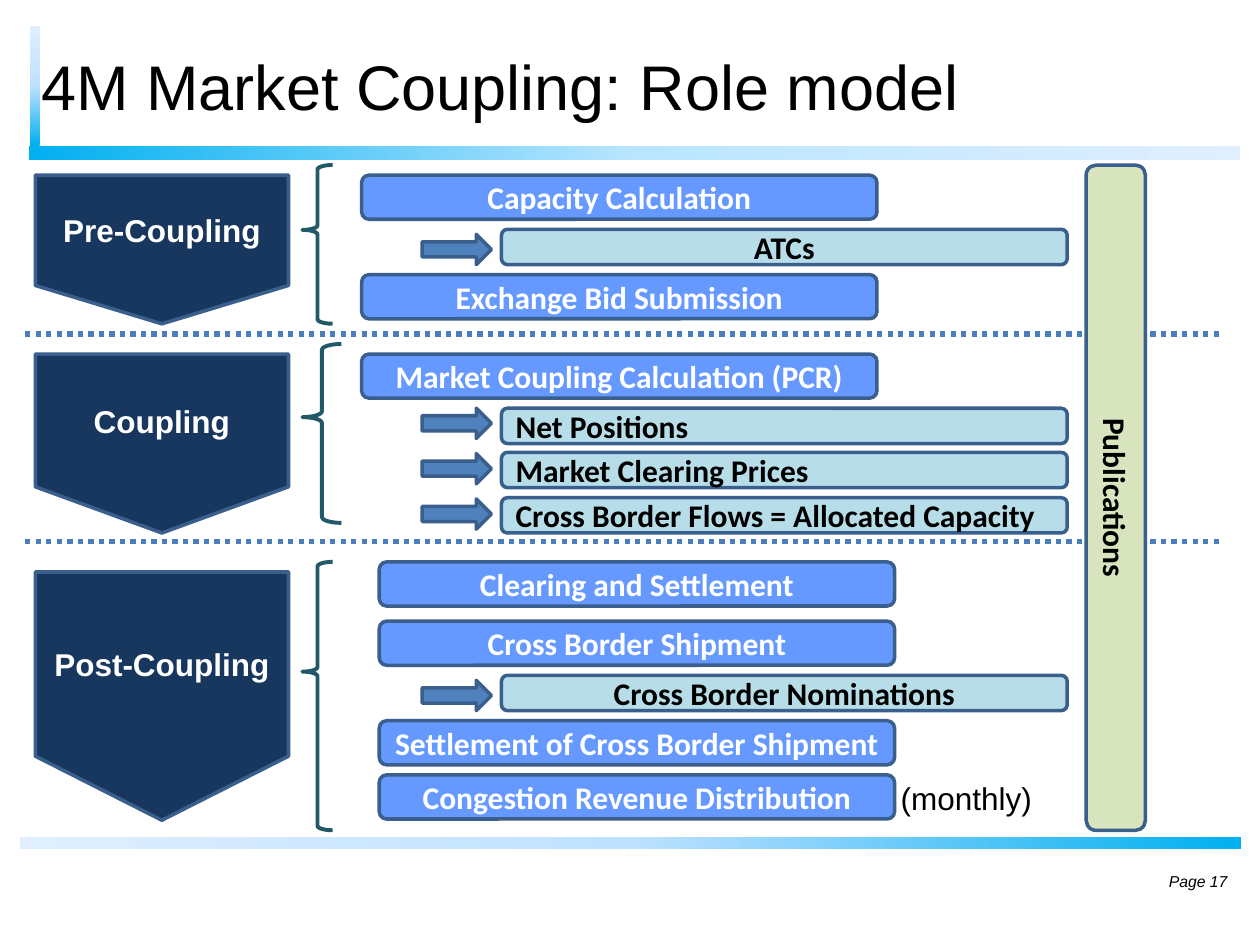
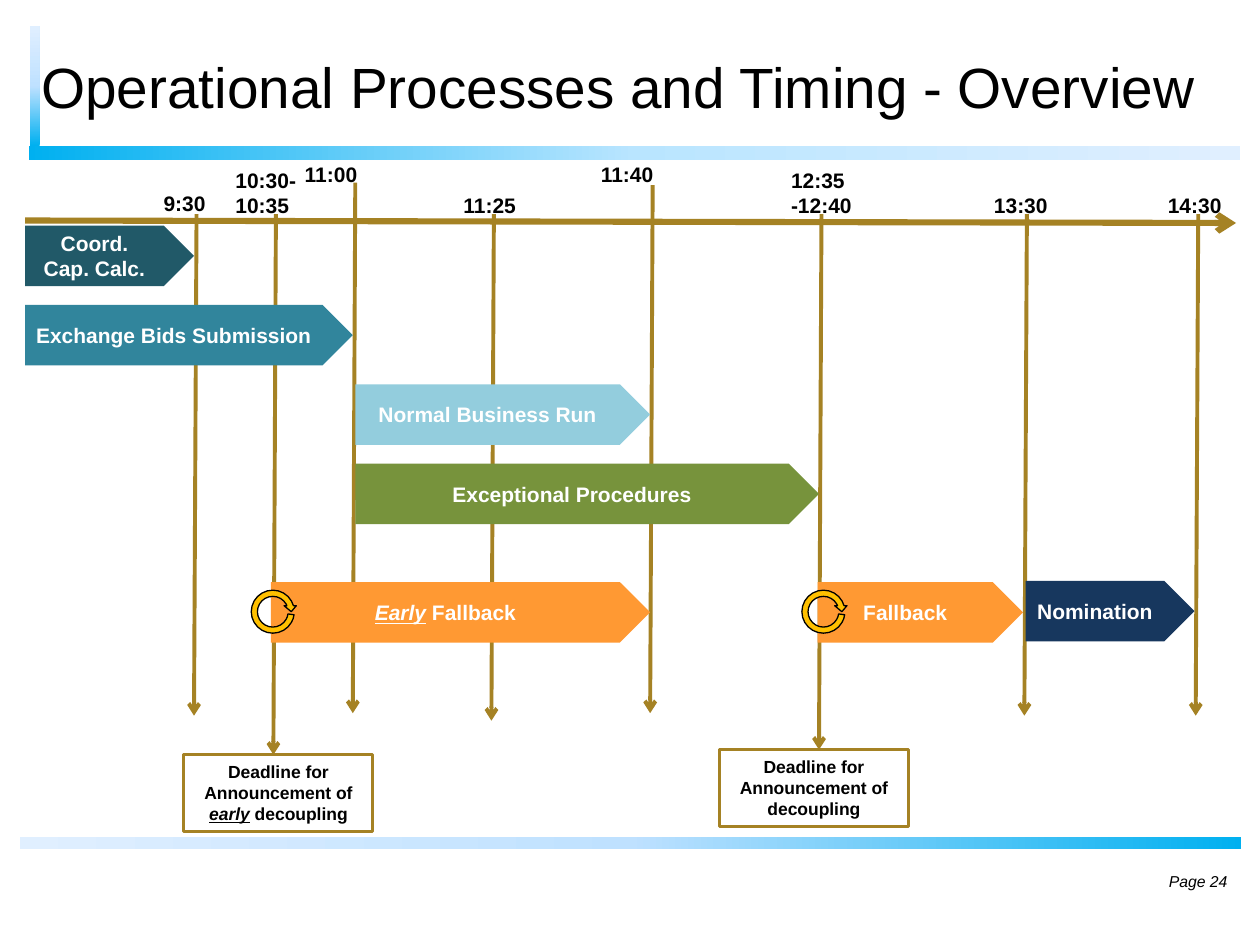
"""Build two market coupling slides: the role model and the daily timing."""
from copy import deepcopy

from pptx import Presentation
from pptx.dml.color import RGBColor
from pptx.enum.dml import MSO_LINE
from pptx.enum.shapes import MSO_CONNECTOR, MSO_SHAPE
from pptx.enum.text import MSO_ANCHOR, PP_ALIGN
from pptx.oxml.ns import qn
from pptx.util import Emu, Pt

PX = 9144
STRAIGHT = MSO_CONNECTOR.STRAIGHT
RECT, ROUND = MSO_SHAPE.RECTANGLE, MSO_SHAPE.ROUNDED_RECTANGLE
DOWN, RIGHT_ARROW = MSO_SHAPE.DOWN_ARROW, MSO_SHAPE.RIGHT_ARROW
BRACE, CIRCULAR = MSO_SHAPE.LEFT_BRACE, MSO_SHAPE.CIRCULAR_ARROW
LEFT, CENTER, RIGHT = PP_ALIGN.LEFT, PP_ALIGN.CENTER, PP_ALIGN.RIGHT
TOP, MIDDLE = MSO_ANCHOR.TOP, MSO_ANCHOR.MIDDLE
DOTTED = MSO_LINE.ROUND_DOT

BLACK, WHITE = "000000", "FFFFFF"
NAVY, EDGE, STEP, OUTPUT, ARROW = "17375E", "3A5F8C", "6699FF", "B7DEE8", "4F81BD"
PUBLICATION, DIVIDER, TEAL = "D7E4BD", "4B7EBC", "215968"
GOLD, ORANGE, AMBER = "A58224", "FF9933", "FFC000"
BLUES = ["00B0F0", "BFE1FF", "E0EFFF"]
HEAD_BLUES = ["00B0F0", "B9E5FF", "E0EFFF"]

BANDS = [
    ((23, 116, 961, 11), HEAD_BLUES, 0),
    ((-20, 64, 95, 8), BLUES, 270),
    ((16, 664, 969, 10), BLUES[::-1], 0),
]

PHASES = [
    {"name": "Pre-Coupling", "arrow": (139, 118), "brace": (131, 24, 126),
     "step_x": 287,
     "steps": [("Capacity Calculation", 139), ("Exchange Bid Submission", 218)],
     "outputs": [("ATCs", 182, 186)], "align": CENTER},
    {"name": "Coupling", "arrow": (281, 142), "brace": (273, 31, 142),
     "step_x": 287,
     "steps": [("Market Coupling Calculation (PCR)", 281)],
     "outputs": [("Net Positions", 324, 324),
                 ("Market Clearing Prices", 359, 360),
                 ("Cross Border Flows = Allocated Capacity", 395, 396)],
     "align": LEFT},
    {"name": "Post-Coupling", "arrow": (454, 197), "brace": (446, 24, 213),
     "step_x": 301,
     "steps": [("Clearing and Settlement", 446),
               ("Cross Border Shipment", 493),
               ("Settlement of Cross Border Shipment", 572),
               ("Congestion Revenue Distribution", 615)],
     "outputs": [("Cross Border Nominations", 536, 540)], "align": CENTER},
]
DIVIDERS = [265, 430]

TIMES = [
    ("9:30", (120, 146, 68, 30), (156, 170, 568)),
    ("10:30-10:35", (177, 128, 79, 50), (219, 170, 599)),
    ("11:00", (232, 123, 68, 30), (282, 145, 566)),
    ("11:25", (358, 148, 68, 30), (392, 170, 572)),
    ("11:40", (467, 123, 68, 30), (518, 147, 566)),
    ("12:35 -12:40", (618, 128, 87, 50), (652, 170, 595)),
    ("13:30", (779, 148, 68, 30), (815, 170, 568)),
    ("14:30", (917, 148, 68, 30), (951, 170, 568)),
]
SLANT = 2
EMPHASIS = {"italic": True, "underline": True}
PROCESSES = [
    (["Coord. Cap. Calc."], 20, 179, 134, TEAL),
    (["Exchange Bids Submission"], 20, 242, 260, "31859C"),
    (["Normal Business Run"], 282, 305, 234, "93CDDD"),
    (["Exceptional Procedures"], 282, 368, 368, "77933C"),
    ([("Early", EMPHASIS), " Fallback"], 215, 462, 301, ORANGE),
    (["Fallback"], 649, 462, 163, ORANGE),
    (["Nomination"], 814, 461, 134, NAVY),
]
DEADLINES = [
    (["Deadline for Announcement of ", ("early", EMPHASIS), " decoupling"], 146, 599),
    (["Deadline for Announcement of decoupling"], 571, 595),
]
LOOPS = [197, 634]


def rgb(value):
    return RGBColor.from_string(value)


def emu(box):
    return [Emu(v * PX) for v in box]


def write(sp, runs, size, color=BLACK, font="Arial", align=LEFT, anchor=MIDDLE,
          wrap=True, **style):
    tf = sp.text_frame
    tf.word_wrap = wrap
    tf.vertical_anchor = anchor
    p = tf.paragraphs[0]
    p.alignment = align
    for run in runs:
        text, extra = (run, {}) if isinstance(run, str) else run
        r = p.add_run()
        r.text = text
        r.font.color.rgb = rgb(color)
        values = {"name": font, "size": Pt(size), **style, **extra}
        for key, value in values.items():
            setattr(r.font, key, value)


def add_text(slide, box, runs, size, **style):
    sp = slide.shapes.add_textbox(*emu(box))
    write(sp, runs, size, **style)
    return sp


def add_shape(slide, kind, box, fill=None, line=None, width=2, adj=()):
    sp = slide.shapes.add_shape(kind, *emu(box))
    sp.shadow.inherit = False
    for i, value in enumerate(adj):
        sp.adjustments[i] = value
    if fill:
        sp.fill.solid()
        sp.fill.fore_color.rgb = rgb(fill)
    else:
        sp.fill.background()
    if line:
        sp.line.color.rgb = rgb(line)
        sp.line.width = Pt(width)
    else:
        sp.line.fill.background()
    return sp


def add_line(slide, ends, color, width, dash=None, arrow=False):
    cx = slide.shapes.add_connector(STRAIGHT, *emu(ends))
    cx.line.color.rgb = rgb(color)
    cx.line.width = Pt(width)
    if dash:
        cx.line.dash_style = dash
    spPr = cx.element.spPr
    if arrow:
        ln = spPr.find(qn("a:ln"))
        ln.append(ln.makeelement(qn("a:tailEnd"), {"type": "arrow"}))
    spPr.append(spPr.makeelement(qn("a:effectLst"), {}))


def add_band(slide, box, colors, rotation):
    sp = add_shape(slide, RECT, box)
    sp.rotation = rotation
    sp.fill.gradient()
    sp.fill.gradient_angle = 0
    stops = sp.element.spPr.find(".//" + qn("a:gsLst"))
    stops.insert(1, deepcopy(stops[0]))
    for stop, color, position in zip(sp.fill.gradient_stops, colors, (0, 0.5, 1)):
        stop.position = position
        stop.color.rgb = rgb(color)


def new_slide(prs, title, size, page):
    slide = prs.slides.add_slide(prs.slide_layouts[6])
    for band in BANDS:
        add_band(slide, *band)
    add_text(slide, (23, 21, 961, 94), [title], size)
    add_text(slide, (875, 679, 109, 40), [f"Page {page}"], 9, align=RIGHT, italic=True)
    return slide


def role_model(prs):
    slide = new_slide(prs, "4M Market Coupling: Role model", 36, 17)
    label = {"font": "Calibri", "bold": True}
    for y in DIVIDERS:
        add_line(slide, (20, y, 968, y), DIVIDER, 3, dash=DOTTED)
    for phase in PHASES:
        top, height = phase["arrow"]
        sp = add_shape(slide, DOWN, (28, top, 201, height), NAVY, EDGE, adj=(1, 0.258))
        write(sp, [phase["name"]], 18, WHITE, align=CENTER, bold=True)
        top, width, height = phase["brace"]
        add_shape(slide, BRACE, (240, top, width, height), None, TEAL, 2.25, (0.149, 0.409))
        for text, y in phase["steps"]:
            sp = add_shape(slide, ROUND, (phase["step_x"], y, 409, 35), STEP, EDGE)
            write(sp, [text], 18, WHITE, align=CENTER, **label)
        for text, y, arrow_y in phase["outputs"]:
            sp = add_shape(slide, ROUND, (398, y, 449, 28), OUTPUT, EDGE)
            write(sp, [text], 18, align=phase["align"], **label)
            add_shape(slide, RIGHT_ARROW, (335, arrow_y, 55, 24), ARROW, EDGE)
    sp = add_shape(slide, ROUND, (862, 131, 47, 528), PUBLICATION, EDGE)
    sp.rotation = 180
    write(sp, ["Publications"], 18, align=CENTER, **label)
    sp.element.txBody.find(qn("a:bodyPr")).set("vert", "vert270")
    add_text(slide, (705, 613, 125, 40), ["(monthly)"], 18, anchor=TOP, wrap=False)


def timing(prs):
    slide = new_slide(prs, "Operational Processes and Timing - Overview", 32.4, 24)
    add_line(slide, (20, 175, 981, 177), GOLD, 3.5, arrow=True)
    for text, box, (x, top, bottom) in TIMES:
        add_line(slide, (x, top, x - SLANT, bottom), GOLD, 2.25, arrow=True)
        add_text(slide, box, [text], 12, anchor=TOP, bold=True)
    for runs, x, y, width, color in PROCESSES:
        sp = add_shape(slide, RIGHT_ARROW, (x, y, width, 48), color, adj=(1, 0.5))
        margins = {"margin_left": 8, "margin_right": 8, "margin_top": 4, "margin_bottom": 4}
        for key, value in margins.items():
            setattr(sp.text_frame, key, Emu(value * PX))
        write(sp, runs, 12, WHITE, align=CENTER, bold=True)
    for x in LOOPS:
        add_shape(slide, CIRCULAR, (x, 466, 39, 39), AMBER, BLACK, 0.75,
                  (0.125, 11.423, 204.577, 4.959, 0.125))
    for runs, x, y in DEADLINES:
        sp = add_shape(slide, RECT, (x, y, 150, 61), None, GOLD, 1.75)
        write(sp, runs, 10, align=CENTER, anchor=TOP, bold=True)


def main():
    prs = Presentation()
    prs.slide_width, prs.slide_height = emu((1000, 750))
    role_model(prs)
    timing(prs)
    prs.save("out.pptx")


if __name__ == "__main__":
    main()
